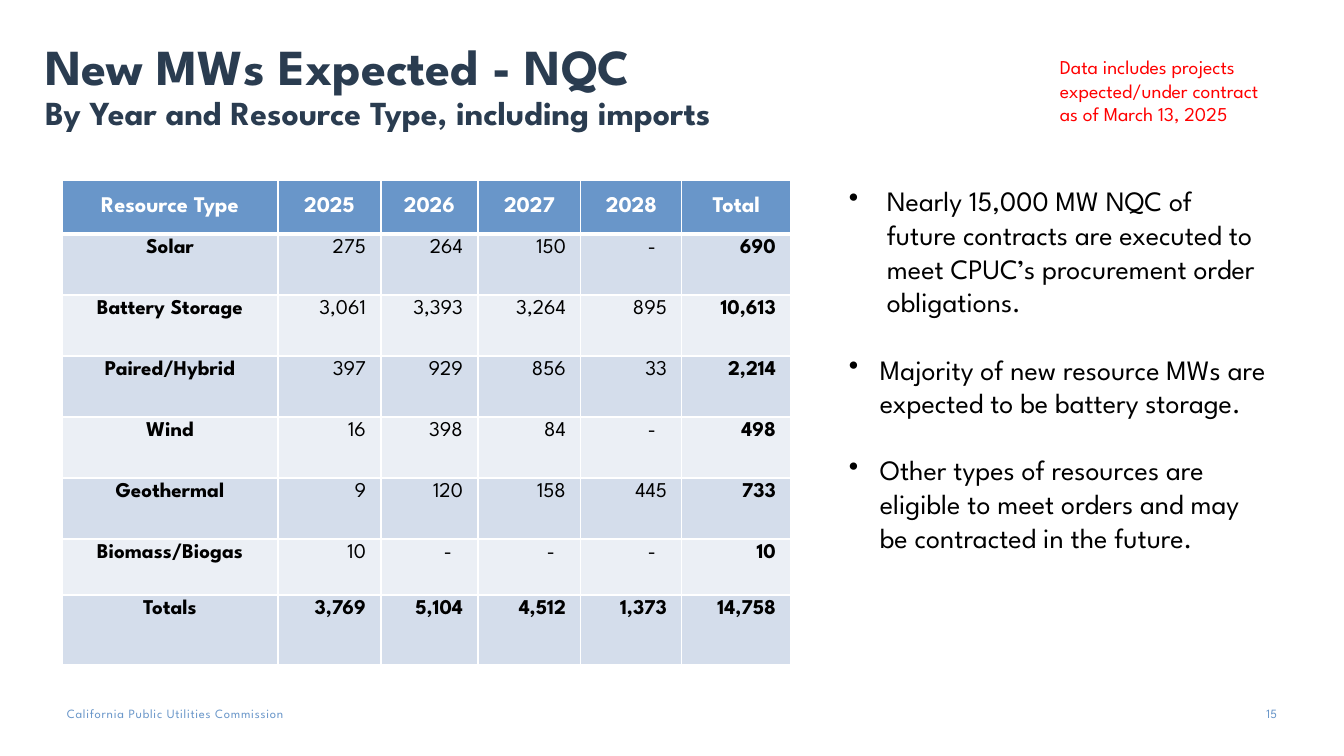
from dataclasses import dataclass

from lxml import etree
from pptx import Presentation, util as u
from pptx.dml.color import RGBColor
from pptx.enum import text
from pptx.oxml import ns

FONT = "League Spartan"
COLORS = {
    "navy": "2A3C50", "blue": "6996C9", "red": "FF0000", "black": "000000",
    "white": "FFFFFF", "band_dark": "D4DDEB", "band_light": "EBEFF5",
}
LEFT, CENTER, RIGHT = text.PP_ALIGN.LEFT, text.PP_ALIGN.CENTER, text.PP_ALIGN.RIGHT


@dataclass
class TextBox:
    left: int
    top: int
    width: int
    height: int
    text: str
    size: int
    color: str
    align: text.PP_ALIGN = LEFT
    inset: bool = True


FOOTER = TextBox(67, 706, 324, 16, "California Public Utilities Commission", 9, "blue", inset=False)
PAGE_NUMBER = TextBox(1235, 706, 42, 20, "15", 9, "blue", RIGHT, inset=False)
NOTE = TextBox(1050, 50, 284, 82,
               "Data includes projects\vexpected/under contract\nas of March 13, 2025", 14, "red")
BULLETS = TextBox(839, 179, 438, 570, "\n".join([
    "Nearly 15,000 MW NQC of future contracts are executed to meet CPUC’s "
    "procurement order obligations.",
    "Majority of new resource MWs are expected to be battery storage.",
    "Other types of resources are eligible to meet orders and may be contracted in the future.",
]), 20, "black")
BULLET_INDENTS = [38, 31, 31]

TITLE_LINES = [("New MWs Expected - NQC", 36),
               ("By Year and Resource Type, including imports", 24)]

ROWS = [
    ["Resource Type", "2025", "2026", "2027", "2028", "Total"],
    ["Solar", "275", "264", "150", "-", "690"],
    ["Battery Storage", "3,061", "3,393", "3,264", "895", "10,613"],
    ["Paired/Hybrid", "397", "929", "856", "33", "2,214"],
    ["Wind", "16", "398", "84", "-", "498"],
    ["Geothermal", "9", "120", "158", "445", "733"],
    ["Biomass/Biogas", "10", "-", "-", "-", "10"],
    ["Totals", "3,769", "5,104", "4,512", "1,373", "14,758"],
]
COL_WIDTHS = [216, 103, 97, 103, 101, 109]
ROW_HEIGHTS = [54, *[61] * 5, 56, 70]


def px(n: int) -> u.Emu:
    return u.Emu(round(n * 914400 / 100.8))


def rgb(name: str) -> RGBColor:
    return RGBColor.from_string(COLORS[name])


def style(font, color: str, size: int | None = None, bold: bool = False) -> None:
    font.name, font.bold = FONT, bold
    font.color.rgb = rgb(color)
    if size:
        font.size = u.Pt(size)


def add_text(s, box: TextBox):
    sp = s.shapes.add_textbox(*map(px, (box.left, box.top, box.width, box.height)))
    tf = sp.text_frame
    tf.word_wrap = True
    if not box.inset:
        tf.margin_left = tf.margin_right = tf.margin_top = tf.margin_bottom = 0
    tf.text = box.text
    for p in tf.paragraphs:
        p.alignment = box.align
        style(p.font, box.color, box.size)
    return tf


def add_title(s) -> None:
    sp = s.shapes.title
    sp.left, sp.top, sp.width, sp.height = map(px, (45, -8, 1210, 146))
    tf = sp.text_frame
    tf.word_wrap, tf.auto_size = True, text.MSO_AUTO_SIZE.NONE
    tf.vertical_anchor = text.MSO_ANCHOR.BOTTOM
    tf.margin_left = 0
    p = tf.paragraphs[0]
    p.alignment, p.line_spacing = LEFT, 0.9
    style(p.font, "navy", bold=True)
    for i, (line, size) in enumerate(TITLE_LINES):
        if i:
            p.add_line_break()
        r = p.add_run()
        r.text, r.font.size = line, u.Pt(size)


def add_bullets(s) -> None:
    tf = add_text(s, BULLETS)
    for p, indent in zip(tf.paragraphs, BULLET_INDENTS):
        p.space_after = u.Pt(24)
        pPr = p._p.get_or_add_pPr()
        pPr.set("marL", str(px(indent)))
        pPr.set("indent", str(-px(indent)))
        bullet = etree.Element(ns.qn("a:buChar"), char="•")
        pPr.find(ns.qn("a:defRPr")).addprevious(bullet)


def add_borders(cell, row: int) -> None:
    thick = {0: "lnB", 1: "lnT"}.get(row)
    tcPr = cell._tc.get_or_add_tcPr()
    for side in ("lnL", "lnR", "lnT", "lnB"):
        width = u.Pt(3 if side == thick else 1)
        ln = etree.SubElement(tcPr, ns.qn(f"a:{side}"), w=str(width))
        fill = etree.SubElement(ln, ns.qn("a:solidFill"))
        etree.SubElement(fill, ns.qn("a:srgbClr"), val=COLORS["white"])


def format_cell(cell, value: str, row: int, col: int) -> None:
    header = row == 0
    add_borders(cell, row)
    cell.fill.solid()
    cell.fill.fore_color.rgb = rgb(
        "blue" if header else "band_dark" if row % 2 else "band_light")
    cell.text = value
    p = cell.text_frame.paragraphs[0]
    bold = header or col in (0, len(COL_WIDTHS) - 1) or row == len(ROWS) - 1
    style(p.font, "white" if header else "black", 16 if header else 15, bold)
    p.alignment = CENTER if header or col == 0 else RIGHT
    cell.vertical_anchor = text.MSO_ANCHOR.MIDDLE if header else text.MSO_ANCHOR.TOP
    if p.alignment == RIGHT:
        cell.margin_right = px(26 if value == "-" else 15)


def add_resource_table(s) -> None:
    frame = s.shapes.add_table(len(ROWS), len(COL_WIDTHS), px(62), px(180),
                               px(sum(COL_WIDTHS)), px(sum(ROW_HEIGHTS)))
    table = frame.table
    for column, width in zip(table.columns, COL_WIDTHS):
        column.width = px(width)
    for i, (values, height) in enumerate(zip(ROWS, ROW_HEIGHTS)):
        table.rows[i].height = px(height)
        for j, value in enumerate(values):
            format_cell(table.cell(i, j), value, i, j)


def main() -> None:
    prs = Presentation()
    prs.slide_width, prs.slide_height = px(1344), px(756)
    s = prs.slides.add_slide(prs.slide_layouts[5])

    # Heading and data note
    add_title(s)
    add_text(s, NOTE)

    # Table and takeaways
    add_resource_table(s)
    add_bullets(s)

    # Footer
    footer = add_text(s, FOOTER)
    footer.paragraphs[0].runs[0]._r.get_or_add_rPr().set("spc", "50")
    add_text(s, PAGE_NUMBER)

    prs.save("out.pptx")


if __name__ == "__main__":
    main()
